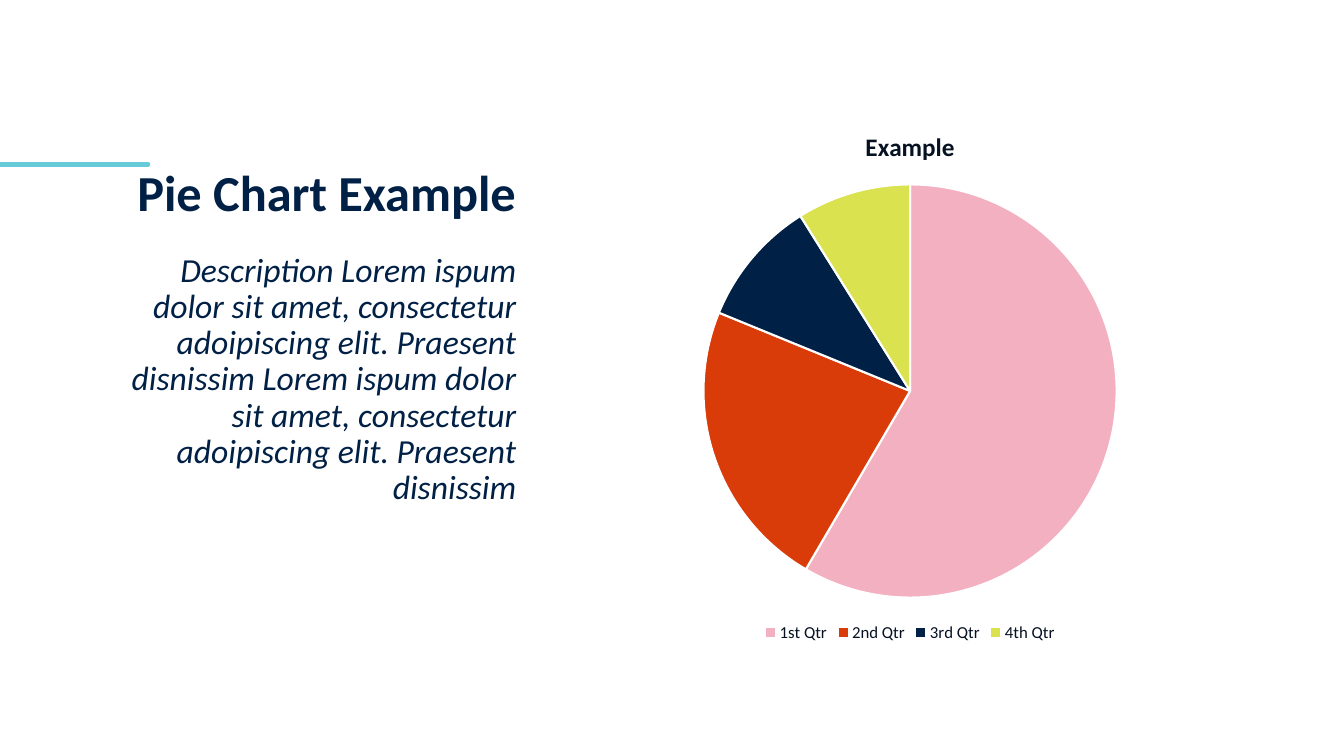
"""Build a slide with a right-aligned description beside a pie chart."""
from lxml import etree
from pptx import Presentation
from pptx import util as u
from pptx.chart.data import CategoryChartData
from pptx.dml.color import RGBColor
from pptx.enum import chart as ch, shapes, text
from pptx.oxml.ns import qn

NAVY = RGBColor(0x00, 0x20, 0x45)
INK = RGBColor(0x06, 0x11, 0x22)
TEAL = RGBColor(0x66, 0xCA, 0xD8)
PINK = RGBColor(0xF3, 0xB0, 0xC1)
ORANGE = RGBColor(0xD9, 0x3C, 0x08)
LIME = RGBColor(0xDA, 0xE2, 0x50)
WHITE = RGBColor(0xFF, 0xFF, 0xFF)
FONT = "Calibri"
QUARTERS = [("1st Qtr", 59, PINK), ("2nd Qtr", 23, ORANGE),
            ("3rd Qtr", 10, NAVY), ("4th Qtr", 9, LIME)]
DESCRIPTION = ("Description Lorem ispum dolor sit amet, consectetur adoipiscing elit. "
               "Praesent disnissim Lorem ispum dolor sit amet, consectetur adoipiscing elit. "
               "Praesent disnissim")


def set_font(font, size, color, bold=False, italic=False):
    """Apply the slide typeface with the given look."""
    font.name, font.size, font.bold, font.italic = FONT, u.Pt(size), bold, italic
    font.color.rgb = color


def add_text(s, x, y, w, h, content, size, anchor, **style):
    """Place one right-aligned paragraph in a box."""
    tf = s.shapes.add_textbox(x, y, w, h).text_frame
    tf.word_wrap = True
    tf.vertical_anchor = anchor
    p = tf.paragraphs[0]
    p.text = content
    p.alignment = text.PP_ALIGN.RIGHT
    p.line_spacing = 0.9
    set_font(p.font, size, NAVY, **style)


def add_accent(s, x, y, w):
    """Draw the round-ended accent rule."""
    line = s.shapes.add_connector(shapes.MSO_CONNECTOR.STRAIGHT, x, y, x + w, y)
    line.line.color.rgb = TEAL
    line.line.width = u.Pt(3.25)
    line.line._get_or_add_ln().set("cap", "rnd")
    etree.SubElement(line._element.spPr, qn("a:effectLst"))


def add_description(s, x, y, w, h):
    """Place the title above the description in the box."""
    title_h = u.Cm(4.45)
    body_top = u.Cm(4.98)
    add_text(s, x, y, w, title_h, "Pie Chart Example", 36,
             text.MSO_ANCHOR.BOTTOM, bold=True)
    add_text(s, x, y + body_top, w, h - body_top, DESCRIPTION, 24,
             text.MSO_ANCHOR.TOP, italic=True)


def add_pie(s, x, y, w, h):
    """Fill the box with the quarterly pie chart."""
    data = CategoryChartData()
    data.categories = [name for name, _, _ in QUARTERS]
    data.add_series("Series 1", [value for _, value, _ in QUARTERS])
    chart = s.shapes.add_chart(ch.XL_CHART_TYPE.PIE, x, y, w, h, data).chart
    set_font(chart.font, 10, INK)
    chart.has_title = True
    p = chart.chart_title.text_frame.paragraphs[0]
    p.text = "Example"
    set_font(p.font, 18, INK, bold=True)
    chart.has_legend = True
    chart.legend.position = ch.XL_LEGEND_POSITION.BOTTOM
    chart.legend.include_in_layout = False
    set_font(chart.legend.font, 12, INK)
    plot = chart.plots[0]
    plot.vary_by_categories = True
    for i, (_, _, color) in enumerate(QUARTERS):
        fmt = plot.series[0].points[i].format
        fmt.fill.solid()
        fmt.fill.fore_color.rgb = color
        fmt.line.color.rgb = WHITE
        fmt.line.width = u.Pt(1.5)


def main():
    """Create and save the slide."""
    prs = Presentation()
    prs.slide_width, prs.slide_height = u.Cm(33.87), u.Cm(19.05)
    s = prs.slides.add_slide(prs.slide_layouts[6])
    add_accent(s, u.Cm(0), u.Cm(4.14), u.Cm(3.73))
    add_pie(s, u.Cm(14.35), u.Cm(2.74), u.Cm(17.17), u.Cm(13.56))
    add_description(s, u.Cm(2.34), u.Cm(1.27), u.Cm(10.92), u.Cm(15.04))
    prs.save("out.pptx")


if __name__ == "__main__":
    main()
